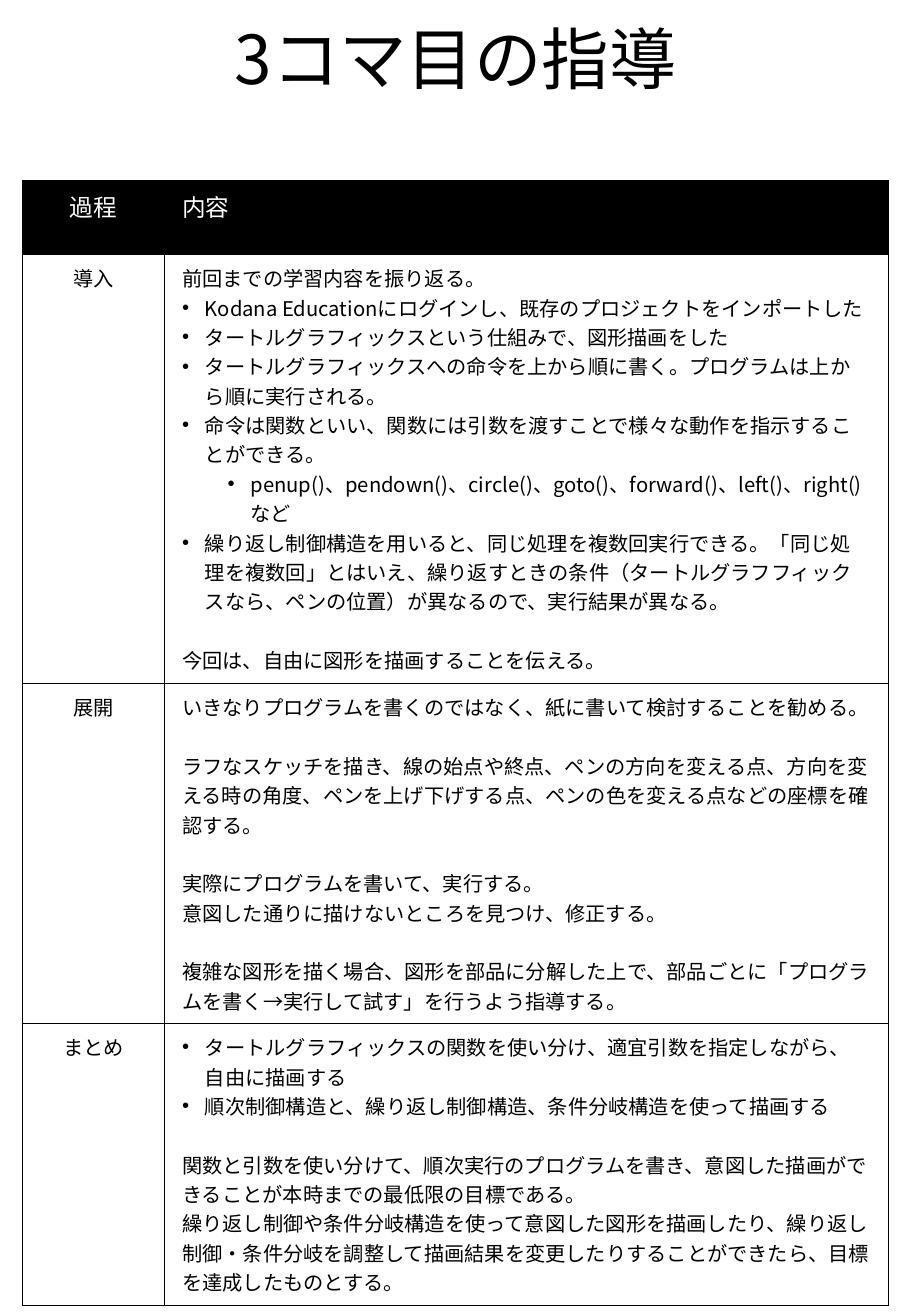
from dataclasses import dataclass

from lxml.etree import SubElement
from pptx import Presentation
from pptx.dml.color import RGBColor
from pptx.enum.text import MSO_ANCHOR, PP_ALIGN
from pptx.oxml import parse_xml
from pptx.oxml.ns import nsdecls, qn
from pptx.util import Pt

FONT = "Noto Sans CJK JP"
BLACK, WHITE = "000000", "FFFFFF"
LINE = 17.4
STEP = 13.5
INDENT = {1: STEP, 2: 3 * STEP}


@dataclass
class Para:
    text: str
    level: int = 0  # 0 plain, 1 bullet, 2 nested bullet
    gap: bool = False  # one empty line above


@dataclass
class Phase:
    name: str
    height: float
    body: list[Para]
    size: int = 12
    ink: str = BLACK
    fill: str = WHITE


PHASES = [
    Phase("過程", 44, [Para("内容")], 14, WHITE, BLACK),
    Phase("導入", 254.2, [
        Para("前回までの学習内容を振り返る。"),
        Para("Kodana Educationにログインし、既存のプロジェクトをインポートした", 1),
        Para("タートルグラフィックスという仕組みで、図形描画をした", 1),
        Para("タートルグラフィックスへの命令を上から順に書く。プログラムは上から順に実行される。", 1),
        Para("命令は関数といい、関数には引数を渡すことで様々な動作を指示することができる。", 1),
        Para("penup()、pendown()、circle()、goto()、forward()、left()、right()など", 2),
        Para("繰り返し制御構造を用いると、同じ処理を複数回実行できる。「同じ処理を複数回」とはいえ、"
             "繰り返すときの条件（タートルグラフフィックスなら、ペンの位置）が異なるので、"
             "実行結果が異なる。", 1),
        Para("今回は、自由に図形を描画することを伝える。", gap=True),
    ]),
    Phase("展開", 201.6, [
        Para("いきなりプログラムを書くのではなく、紙に書いて検討することを勧める。"),
        Para("ラフなスケッチを描き、線の始点や終点、ペンの方向を変える点、方向を変える時の角度、"
             "ペンを上げ下げする点、ペンの色を変える点などの座標を確認する。", gap=True),
        Para("実際にプログラムを書いて、実行する。", gap=True),
        Para("意図した通りに描けないところを見つけ、修正する。"),
        Para("複雑な図形を描く場合、図形を部品に分解した上で、部品ごとに"
             "「プログラムを書く→実行して試す」を行うよう指導する。", gap=True),
    ]),
    Phase("まとめ", 167, [
        Para("タートルグラフィックスの関数を使い分け、適宜引数を指定しながら、自由に描画する", 1),
        Para("順次制御構造と、繰り返し制御構造、条件分岐構造を使って描画する", 1),
        Para("関数と引数を使い分けて、順次実行のプログラムを書き、"
             "意図した描画ができることが本時までの最低限の目標である。", gap=True),
        Para("繰り返し制御や条件分岐構造を使って意図した図形を描画したり、"
             "繰り返し制御・条件分岐を調整して描画結果を変更したりすることができたら、"
             "目標を達成したものとする。"),
    ]),
]


def color(code: str) -> RGBColor:
    return RGBColor.from_string(code)


def style(para, size: float, ink: str) -> None:
    for run in para.runs:
        run.font.size = Pt(size)
        run.font.bold = False
        run.font.color.rgb = color(ink)
        run.font.name = FONT
        SubElement(run.font._element, qn("a:ea")).set("typeface", FONT)


def bullet(para, level: int) -> None:
    para.level = level - 1
    props = para._p.get_or_add_pPr()
    props.set("marL", str(Pt(INDENT[level])))
    props.set("indent", str(-Pt(STEP)))
    SubElement(props, qn("a:buFont")).set("typeface", "Arial")
    SubElement(props, qn("a:buChar")).set("char", "•")


def border(cell) -> None:
    props = cell._tc.get_or_add_tcPr()
    for spot, side in enumerate(("lnL", "lnR", "lnT", "lnB")):
        props.insert(spot, parse_xml(
            f'<a:{side} {nsdecls("a")} w="{Pt(1)}"><a:solidFill>'
            f'<a:srgbClr val="{BLACK}"/></a:solidFill></a:{side}>'))


def write(cell, paras: list[Para], phase: Phase, align: PP_ALIGN) -> None:
    cell.margin_left = cell.margin_right = Pt(10.5)
    cell.margin_top = cell.margin_bottom = Pt(5.1)
    cell.vertical_anchor = MSO_ANCHOR.TOP
    cell.fill.solid()
    cell.fill.fore_color.rgb = color(phase.fill)
    border(cell)
    frame = cell.text_frame
    frame.text = "\n".join(item.text for item in paras)
    for para, item in zip(frame.paragraphs, paras):
        if item.level:
            bullet(para, item.level)
        para.alignment = align
        if item.gap:
            para.space_before = Pt(LINE)
        style(para, phase.size, phase.ink)


def main() -> None:
    deck = Presentation()
    deck.slide_width, deck.slide_height = Pt(540), Pt(780)
    slide = deck.slides.add_slide(deck.slide_layouts[6])

    # Title
    frame = slide.shapes.add_textbox(Pt(40.5), Pt(4.5), Pt(459), Pt(58)).text_frame
    frame.word_wrap = True
    frame.vertical_anchor = MSO_ANCHOR.BOTTOM
    frame.text = "3コマ目の指導"
    title = frame.paragraphs[0]
    title.alignment = PP_ALIGN.CENTER
    title.line_spacing = 0.9
    style(title, 40, BLACK)

    # Lesson table
    high = sum(phase.height for phase in PHASES)
    table = slide.shapes.add_table(
        len(PHASES), 2, Pt(13.2), Pt(107), Pt(513.4), Pt(high)).table
    table.horz_banding = False
    for col, width in zip(table.columns, (84.3, 429.1)):
        col.width = Pt(width)
    for row, phase in zip(table.rows, PHASES):
        row.height = Pt(phase.height)
        write(row.cells[0], [Para(phase.name)], phase, PP_ALIGN.CENTER)
        write(row.cells[1], phase.body, phase, PP_ALIGN.LEFT)

    deck.save("out.pptx")


if __name__ == "__main__":
    main()
